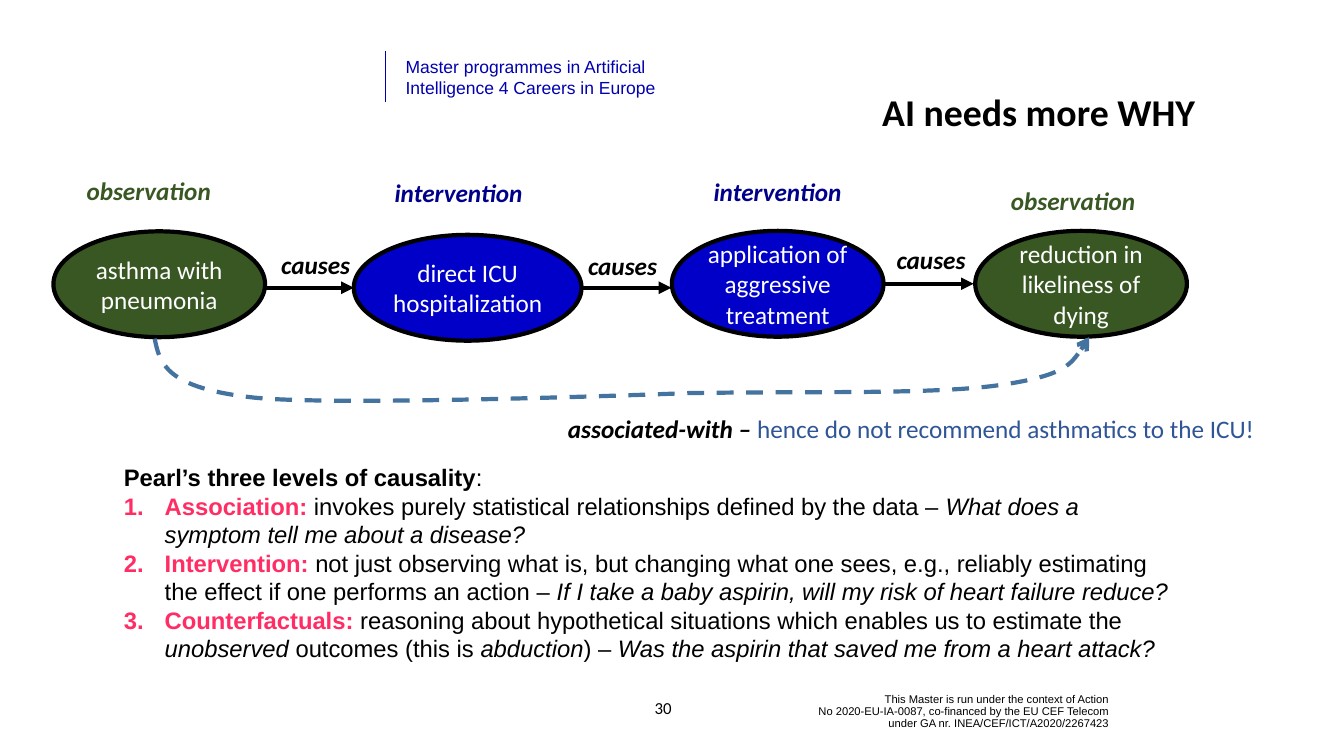
import lxml.etree
import pptx
import pptx.dml.color
import pptx.enum.dml
import pptx.enum.shapes
import pptx.enum.text
import pptx.oxml
import pptx.oxml.ns
import pptx.util

Pt = pptx.util.Pt
ALIGN = pptx.enum.text.PP_ALIGN
ANCHOR = pptx.enum.text.MSO_ANCHOR

THEME = {
    "black": "000000", "white": "FFFFFF", "green": "385723", "blue": "0100C8",
    "navy": "00008A", "header": "0000B0", "pink": "FF2D64", "note": "2F5597",
    "curve": "43739E",
    "footer_size": 16, "number_size": 24, "header_size": 25,
    "body_size": 34, "diagram_size": 36, "title_size": 54,
    "outline": 6, "hairline": 0.5,
}

DIAGRAM = {"size": THEME["diagram_size"], "name": "Calibri"}
LABEL = {**DIAGRAM, "bold": True, "italic": True, "color": "black"}
BODY = {"size": THEME["body_size"], "name": "Arial", "color": "black"}
STRONG = {**BODY, "bold": True}
LEVEL = {**STRONG, "color": "pink"}
EXAMPLE = {**BODY, "italic": True}

# Text, fill, (left, top, width)
STAGES = [
    ("asthma with pneumonia", "green", (76.3, 330.5, 302.4)),
    ("direct ICU hospitalization", "blue", (505.4, 335.5, 325.4)),
    ("application of aggressive treatment", "blue", (959.8, 329.8, 302.4)),
    ("reduction in likeliness of dying", "green", (1393.2, 329.8, 302.4)),
]
STAGE_HEIGHT = 151.2

# Text, colour, (left, top, width)
LABELS = [
    ("observation", "green", (116.6, 247, 197.3)),
    ("intervention", "navy", (556.6, 249.8, 213.8)),
    ("intervention", "navy", (1012.3, 248.4, 213.8)),
    ("observation", "green", (1437.1, 261.4, 213.8)),
    ("causes", "black", (394.6, 352.8, 128.9)),
    ("causes", "black", (833, 354.2, 128.9)),
    ("causes", "black", (1273.7, 344.9, 128.9)),
]
LABEL_HEIGHT = 51

# Left, y
CAUSE_ARROWS = [(378.7, 411.1), (832.3, 411.1), (1264.3, 405.4)]
CAUSE_LENGTH = 126.7

# Start point, then three points for each cubic segment
ASSOCIATION_CURVE = [
    (221, 483.8),
    (228.2, 519.1), (236.2, 554.4), (363.6, 568.1),
    (490.3, 581), (983.5, 561.6), (983.5, 561.6),
    (1160.6, 558.7), (1332.7, 563.8), (1428.5, 550.1),
    (1523.5, 536.4), (1539.4, 509), (1555.9, 481.7),
]

CAUSALITY_HEADING = [("Pearl’s three levels of causality", STRONG), (":", BODY)]
CAUSALITY_LEVELS = [
    [("Association:", LEVEL),
     (" invokes purely statistical relationships defined by the data – ", BODY),
     ("What does a symptom tell me about a disease?", EXAMPLE)],
    [("Intervention:", LEVEL),
     (" not just observing what is, but changing what one sees, e.g., reliably "
      "estimating the effect if one performs an action – ", BODY),
     ("If I take a baby aspirin, will my risk of heart failure reduce?", EXAMPLE)],
    [("Counterfactuals:", LEVEL),
     (" reasoning about hypothetical situations which enables us to estimate the ", BODY),
     ("unobserved", EXAMPLE), (" outcomes (this is ", BODY),
     ("abduction", EXAMPLE), (") – ", BODY),
     ("Was the aspirin that saved me from a heart attack?", EXAMPLE)],
]
NUMBER_INDENT = 58.3


def color_of(name):
    return pptx.dml.color.RGBColor.from_string(THEME[name])


def add_spans(para, spans):
    """Add (text, format) pairs; a newline in a text becomes a line break."""
    for text, style in spans:
        for index, line in enumerate(text.split("\n")):
            if index:
                para.add_line_break()
            span = para.add_run()
            span.text = line
            for key, value in style.items():
                if key == "color":
                    span.font.color.rgb = color_of(value)
                else:
                    setattr(span.font, key, Pt(value) if key == "size" else value)


def add_text(slide, place, spans, anchor=ANCHOR.TOP, **para_format):
    box = slide.shapes.add_textbox(*map(Pt, place))
    box.text_frame.word_wrap = True
    box.text_frame.vertical_anchor = anchor
    para = box.text_frame.paragraphs[0]
    for key, value in para_format.items():
        setattr(para, key, value)
    add_spans(para, spans)
    return box


def number_paragraph(para):
    properties = para._p.get_or_add_pPr()
    indent = Pt(NUMBER_INDENT)
    properties.set("marL", str(indent))
    properties.set("indent", str(-indent))
    for tag, name, value in [("a:buFont", "typeface", "Arial"),
                             ("a:buAutoNum", "type", "arabicPeriod")]:
        element = pptx.oxml.ns.qn(tag)
        lxml.etree.SubElement(properties, element).set(name, value)


def style_line(shape, color, width, head=None):
    shape.line.color.rgb = color_of(color)
    shape.line.width = Pt(width)
    if head:
        end = lxml.etree.SubElement(shape.line._get_or_add_ln(), pptx.oxml.ns.qn("a:tailEnd"))
        end.set("type", head)


def add_line(slide, start, end, color, width, head=None):
    straight = pptx.enum.shapes.MSO_CONNECTOR.STRAIGHT
    line = slide.shapes.add_connector(straight, *map(Pt, start + end))
    style_line(line, color, width, head)
    lxml.etree.SubElement(line._element.spPr, pptx.oxml.ns.qn("a:effectLst"))


def add_stage(slide, text, fill, place):
    oval = slide.shapes.add_shape(pptx.enum.shapes.MSO_SHAPE.OVAL,
                                  *map(Pt, place + (STAGE_HEIGHT,)))
    oval.shadow.inherit = False
    oval.fill.solid()
    oval.fill.fore_color.rgb = color_of(fill)
    style_line(oval, "black", THEME["outline"])
    oval.text_frame.word_wrap = True
    oval.text_frame.vertical_anchor = ANCHOR.MIDDLE
    para = oval.text_frame.paragraphs[0]
    para.alignment = ALIGN.CENTER
    add_spans(para, [(text, {**DIAGRAM, "color": "white"})])


def add_curve(slide, points):
    """Draw an outline through the points, then join each three into a cubic."""
    start, *rest = [tuple(map(Pt, point)) for point in points]
    builder = slide.shapes.build_freeform(*start)
    builder.add_line_segments(rest, close=False)
    curve = builder.convert_to_shape()
    lines = list(curve._element.iter(pptx.oxml.ns.qn("a:lnTo")))
    for first in range(0, len(lines), 3):
        outline = lines[first].getparent()
        cubic = lxml.etree.SubElement(outline, pptx.oxml.ns.qn("a:cubicBezTo"))
        for line in lines[first:first + 3]:
            cubic.append(line[0])
            outline.remove(line)
    curve.shadow.inherit = False
    curve.fill.background()
    curve.line.dash_style = pptx.enum.dml.MSO_LINE.DASH
    style_line(curve, "curve", THEME["outline"], "arrow")


def main():
    deck = pptx.Presentation()
    deck.slide_width, deck.slide_height = Pt(1920), Pt(1080)
    slide = deck.slides.add_slide(deck.slide_layouts[6])

    add_text(slide, (1081.4, 989.3, 509.8, 54.7), [(
        "This Master is run under the context of Action\n"
        "No 2020-EU-IA-0087, co-financed by the EU CEF Telecom\n"
        "under GA nr. INEA/CEF/ICT/A2020/2267423",
        {"size": THEME["footer_size"], "name": "Arial", "color": "black"})],
        ANCHOR.MIDDLE, alignment=ALIGN.RIGHT, line_spacing=0.9)
    add_line(slide, (550.8, 72.7), (550.8, 146.2), "header", THEME["hairline"])
    add_text(slide, (572.4, 76.3, 458.6, 67.7), [(
        "Master programmes in Artificial\nIntelligence 4 Careers in Europe",
        {"size": THEME["header_size"], "name": "Arial", "color": "header"})])
    add_text(slide, (907.2, 982.1, 79.9, 57.6), [(
        "30", {"size": THEME["number_size"], "name": "Calibri", "color": "black"})],
        ANCHOR.MIDDLE, alignment=ALIGN.CENTER)

    for text, fill, place in STAGES:
        add_stage(slide, text, fill, place)
    for left, y in CAUSE_ARROWS:
        add_line(slide, (left, y), (left + CAUSE_LENGTH, y),
                 "black", THEME["outline"], "triangle")
    add_curve(slide, ASSOCIATION_CURVE)
    for text, color, place in LABELS:
        add_text(slide, place + (LABEL_HEIGHT,), [(text, {**LABEL, "color": color})])
    add_text(slide, (804.2, 587.5, 1023.1, LABEL_HEIGHT), [
        ("associated-with – ", LABEL),
        ("hence do not recommend asthmatics to the ICU!", {**DIAGRAM, "color": "note"})])

    causality = add_text(slide, (169.9, 657.4, 1522.8, 337), CAUSALITY_HEADING)
    for spans in CAUSALITY_LEVELS:
        para = causality.text_frame.add_paragraph()
        number_paragraph(para)
        add_spans(para, spans)

    add_text(slide, (1238.4, 123.8, 491, 72.7), [(
        "AI needs more WHY",
        {"size": THEME["title_size"], "name": "Calibri", "bold": True, "color": "black"})],
        alignment=ALIGN.CENTER)
    deck.save("out.pptx")


if __name__ == "__main__":
    main()
